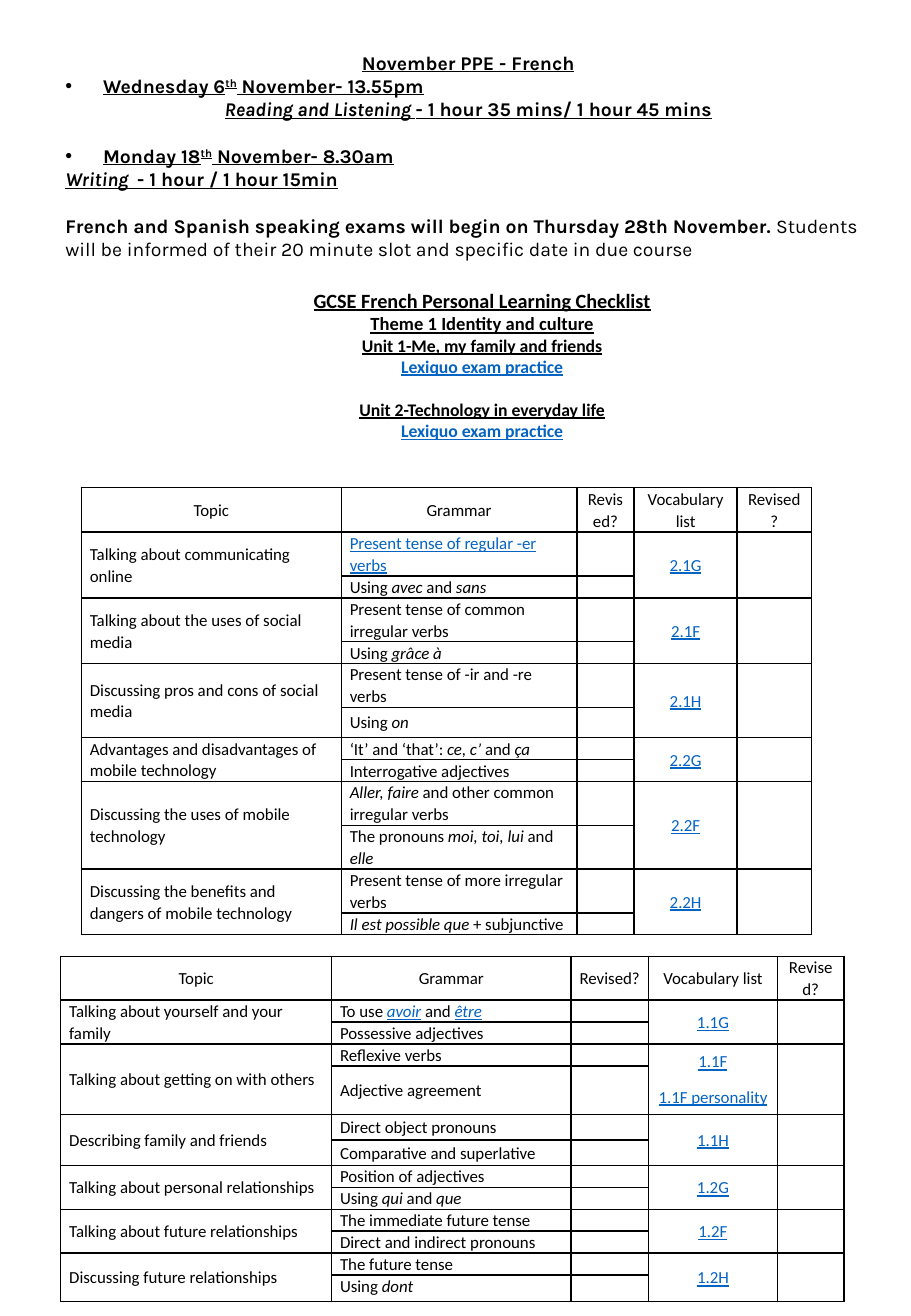
from lxml.etree import SubElement
from pptx import Presentation
from pptx.dml.color import RGBColor
from pptx.enum.text import MSO_ANCHOR as Anchor, MSO_AUTO_SIZE as AutoSize, PP_ALIGN as Align
from pptx.oxml.ns import qn
from pptx.util import Inches, Pt

COLOURS = {"text": "000000", "link": "0563C1", "border": "000000"}
CENTRED = {"alignment": Align.CENTER}
CELL_SPACING = {"line_spacing": 1.07, "space_after": Pt(8)}
HEADERS = ["Topic", "Grammar", "Revised?", "Vocabulary list", "Revised?"]

SCHEDULE = [
    ("bu~Wednesday 6|bus~th|bu~ November- 13.55pm", {}, True),
    ("biu~Reading and Listening |bu~- 1 hour 35 mins/ 1 hour 45 mins", CENTRED, False),
    ("bu~Monday 18|bus~th|bu~ November- 8.30am", {"space_before": Pt(13.8)}, True),
    ("biu~Writing  |bu~- 1 hour / 1 hour 15min", {}, False),
    ("b~French and Spanish speaking exams will begin on Thursday 28th November. "
     "|Students will be informed of their 20 minute slot and specific date in due course",
     {"space_before": Pt(13.8)}, False),
]

PRACTICE_LINK = "bl~Lexiquo exam practice"
CHECKLIST = [
    ("bu~GCSE French Personal Learning Checklist", 12, 0),
    ("bu~Theme 1 Identity and culture", 11, 0),
    ("bu~Unit 1-Me, my family and friends", 10.5, 0),
    (PRACTICE_LINK, 10.5, 0),
    ("bu~Unit 2-Technology in everyday life", 10.5, 12.8),
    (PRACTICE_LINK, 10.5, 0),
]

FAMILY_TOPICS = [
    ("Talking about yourself and your family",
     ["To use |il~avoir| and |il~être", "Possessive adjectives"], ["1.1G"]),
    ("Talking about getting on with others",
     ["Reflexive verbs", "Adjective agreement"], ["1.1F", "1.1F personality"]),
    ("Describing family and friends",
     ["Direct object pronouns", "Comparative and superlative"], ["1.1H"]),
    ("Talking about personal relationships",
     ["Position of adjectives", "Using |i~qui |and |i~que"], ["1.2G"]),
    ("Talking about future relationships",
     ["The immediate future tense", "Direct and indirect pronouns"], ["1.2F"]),
    ("Discussing future relationships",
     ["The future tense", "Using |i~dont"], ["1.2H"]),
]
FAMILY_COLUMNS = [2.23, 1.97, 0.64, 1.06, 0.55]
FAMILY_ROWS = [0.3, 0.15, 0.15, 0.15, 0.4, 0.21, 0.21, 0.15, 0.15, 0.15, 0.15, 0.15, 0.22]

TECHNOLOGY_TOPICS = [
    ("Talking about communicating online",
     ["l~Present tense of regular -er verbs", "Using |i~avec |and|i~ sans"], ["2.1G"]),
    ("Talking about the uses of social media",
     ["Present tense of common irregular verbs", "Using |i~grâce à"], ["2.1F"]),
    ("Discussing pros and cons of social media",
     ["Present tense of -ir and -re verbs", "Using |i~on"], ["2.1H"]),
    ("Advantages and disadvantages of mobile technology",
     ["‘It’ and ‘that’: |i~ce, c’| and |i~ça", "Interrogative adjectives"], ["2.2G"]),
    ("Discussing the uses of mobile technology",
     ["i~Aller, faire| and other common irregular verbs",
      "The pronouns |i~moi, toi, lui| and |i~elle"], ["2.2F"]),
    ("Discussing the benefits and dangers of mobile technology",
     ["Present tense of more irregular verbs", "i~Il est possible que| + subjunctive"], ["2.2H"]),
]
TECHNOLOGY_COLUMNS = [2.14, 1.94, 0.47, 0.85, 0.61]
TECHNOLOGY_ROWS = [0.37, 0.34, 0.18, 0.34, 0.17, 0.34, 0.25, 0.17, 0.17, 0.34, 0.34, 0.34, 0.17]


def apply(target, values):
    for name, value in values.items():
        setattr(target, name, value)


def write_line(paragraph, markup, typeface, size, layout):
    apply(paragraph, layout)
    for segment in markup.split("|"):
        flags, _, words = segment.rpartition("~")
        run = paragraph.add_run()
        run.text = words
        apply(run.font, {"name": typeface, "size": Pt(size), "bold": "b" in flags,
                         "italic": "i" in flags, "underline": "u" in flags or "l" in flags})
        run.font.color.rgb = RGBColor.from_string(COLOURS["link" if "l" in flags else "text"])
        if "s" in flags:
            run.font._element.set("baseline", "30000")


def paragraph_at(frame, index):
    return frame.paragraphs[0] if index == 0 else frame.add_paragraph()


def add_text_frame(slide, left, top, width, height):
    frame = slide.shapes.add_textbox(*map(Inches, (left, top, width, height))).text_frame
    frame.word_wrap = True
    return frame


def add_title(slide, left, top, width, height):
    title = slide.shapes.title
    apply(title, {"left": Inches(left), "top": Inches(top),
                  "width": Inches(width), "height": Inches(height)})
    apply(title.text_frame, {"word_wrap": True, "auto_size": AutoSize.NONE,
                             "vertical_anchor": Anchor.TOP})
    write_line(title.text_frame.paragraphs[0], "bu~November PPE - French", "Karla", 11.5, CENTRED)


def add_schedule(slide, left, top, width, height):
    frame = add_text_frame(slide, left, top, width, height)
    for index, (markup, layout, bulleted) in enumerate(SCHEDULE):
        line = paragraph_at(frame, index)
        write_line(line, markup, "Karla", 11.5, layout)
        if bulleted:
            properties = line._p.get_or_add_pPr()
            properties.set("marL", str(Inches(0.31)))
            properties.set("indent", str(Inches(-0.31)))
            SubElement(properties, qn("a:buFont"), typeface="Arial")
            SubElement(properties, qn("a:buChar"), char="•")


def add_checklist_heading(slide, left, top, width, height):
    frame = add_text_frame(slide, left, top, width, height)
    for index, (markup, size, gap) in enumerate(CHECKLIST):
        write_line(paragraph_at(frame, index), markup, "Calibri", size,
                   {**CENTRED, "space_before": Pt(gap)})


def format_cell(cell):
    apply(cell, {"margin_left": Inches(0.07), "margin_right": Inches(0.07),
                 "margin_top": 0, "margin_bottom": 0, "vertical_anchor": Anchor.MIDDLE})
    properties = cell._tc.get_or_add_tcPr()
    for side in ("a:lnL", "a:lnR", "a:lnT", "a:lnB"):
        border = SubElement(properties, qn(side), w=str(Pt(1)))
        SubElement(SubElement(border, qn("a:solidFill")), qn("a:srgbClr"), val=COLOURS["border"])
    cell.fill.background()


def write_cell(cell, lines, layout):
    for index, markup in enumerate(lines):
        write_line(paragraph_at(cell.text_frame, index), markup, "Calibri", 10,
                   {**CELL_SPACING, **layout})


def add_topic_table(slide, left, top, columns, rows, topics):
    table = slide.shapes.add_table(len(rows), len(columns), Inches(left), Inches(top),
                                   Inches(sum(columns)), Inches(sum(rows))).table
    apply(table, {"first_row": False, "horz_banding": False})
    for column, width in zip(table.columns, columns):
        column.width = Inches(width)
    for row, height in zip(table.rows, rows):
        row.height = Inches(height)
    for cell in table.iter_cells():
        format_cell(cell)
    for column, header in enumerate(HEADERS):
        write_cell(table.cell(0, column), [header], CENTRED)
    for index, (topic, grammar, vocabulary) in enumerate(topics):
        first = 1 + 2 * index
        for column in (0, 3, 4):
            table.cell(first, column).merge(table.cell(first + 1, column))
        write_cell(table.cell(first, 0), [topic], {})
        for offset, point in enumerate(grammar):
            write_cell(table.cell(first + offset, 1), [point], {})
        write_cell(table.cell(first, 3), [f"l~{unit}" for unit in vocabulary], CENTRED)
    table.cell(len(rows) - 1, 1).vertical_anchor = Anchor.TOP
    for cell in table.iter_cells():
        if not cell.text_frame.text:
            SubElement(cell.text_frame.paragraphs[0]._p, qn("a:endParaRPr"), sz="1000")


def main():
    deck = Presentation()
    apply(deck, {"slide_width": Inches(7.5), "slide_height": Inches(10.83)})
    slide = deck.slides.add_slide(deck.slide_layouts[5])
    add_title(slide, 0.44, 0.37, 6.83, 0.24)
    add_topic_table(slide, 0.5, 7.87, FAMILY_COLUMNS, FAMILY_ROWS, FAMILY_TOPICS)
    add_topic_table(slide, 0.67, 4.01, TECHNOLOGY_COLUMNS, TECHNOLOGY_ROWS, TECHNOLOGY_TOPICS)
    add_checklist_heading(slide, 0, 2.32, 7.94, 1.64)
    add_schedule(slide, 0.44, 0.56, 6.83, 1.65)
    deck.save("out.pptx")


if __name__ == "__main__":
    main()
